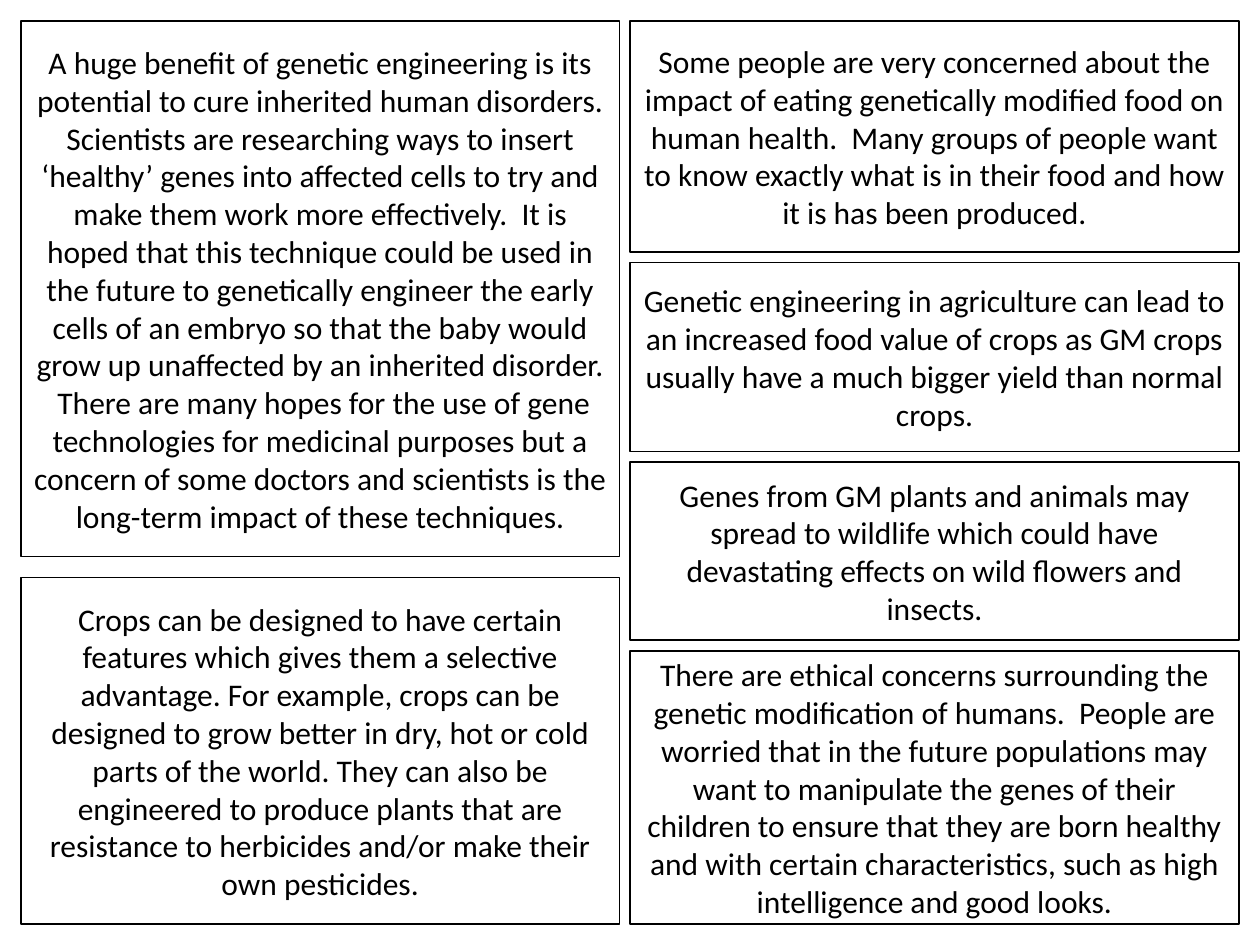
from pptx import Presentation
from pptx.dml.color import RGBColor
from pptx.enum.shapes import MSO_SHAPE
from pptx.enum.text import MSO_ANCHOR, PP_ALIGN
from pptx.util import Inches, Pt

BLACK = RGBColor(0x00, 0x00, 0x00)

# The page is a grid of 120 columns by 90 rows of square cells
CELL = Inches(10) // 120
MARGIN = 2

# Each card is its height in rows and its text
BENEFIT_CARDS = [
    (51, "A huge benefit of genetic engineering is its potential to cure inherited "
         "human disorders. Scientists are researching ways to insert ‘healthy’ genes "
         "into affected cells to try and make them work more effectively.  It is hoped "
         "that this technique could be used in the future to genetically engineer the "
         "early cells of an embryo so that the baby would grow up unaffected by an "
         "inherited disorder.  There are many hopes for the use of gene technologies "
         "for medicinal purposes but a concern of some doctors and scientists is the "
         "long-term impact of these techniques."),
    (33, "Crops can be designed to have certain features which gives them a selective "
         "advantage. For example, crops can be designed to grow better in dry, hot or "
         "cold parts of the world. They can also be engineered to produce plants that "
         "are resistance to herbicides and/or make their own pesticides."),
]
CONCERN_CARDS = [
    (22, "Some people are very concerned about the impact of eating genetically "
         "modified food on human health.  Many groups of people want to know exactly "
         "what is in their food and how it is has been produced."),
    (18, "Genetic engineering in agriculture can lead to an increased food value of "
         "crops as GM crops usually have a much bigger yield than normal crops."),
    (17, "Genes from GM plants and animals may spread to wildlife which could have "
         "devastating effects on wild flowers and insects."),
    (26, "There are ethical concerns surrounding the genetic modification of humans.  "
         "People are worried that in the future populations may want to manipulate the "
         "genes of their children to ensure that they are born healthy and with certain "
         "characteristics, such as high intelligence and good looks."),
]


def add_card(page, left, top, width, height, text):
    """Draw one outlined card with centred text."""
    card = page.shapes.add_shape(
        MSO_SHAPE.RECTANGLE, left * CELL, top * CELL, width * CELL, height * CELL)
    card.shadow.inherit = False
    card.fill.background()
    card.line.color.rgb = BLACK
    card.line.width = Pt(1)

    frame = card.text_frame
    frame.word_wrap = True
    frame.vertical_anchor = MSO_ANCHOR.MIDDLE
    para = frame.paragraphs[0]
    para.text = text
    para.alignment = PP_ALIGN.CENTER
    para.font.name = "Calibri"
    para.font.size = Pt(18)
    para.font.color.rgb = BLACK


def add_card_column(page, left, width, gap, cards):
    """Stack cards from the top margin down, with equal gaps."""
    top = MARGIN
    for height, text in cards:
        add_card(page, left, top, width, height, text)
        top += height + gap


def main():
    deck = Presentation()
    deck.slide_width = 120 * CELL
    deck.slide_height = 90 * CELL
    page = deck.slides.add_slide(deck.slide_layouts[6])

    # Left column
    add_card_column(page, MARGIN, 57, 2, BENEFIT_CARDS)
    # Right column
    add_card_column(page, 60, 58, 1, CONCERN_CARDS)

    deck.save("out.pptx")


if __name__ == "__main__":
    main()
